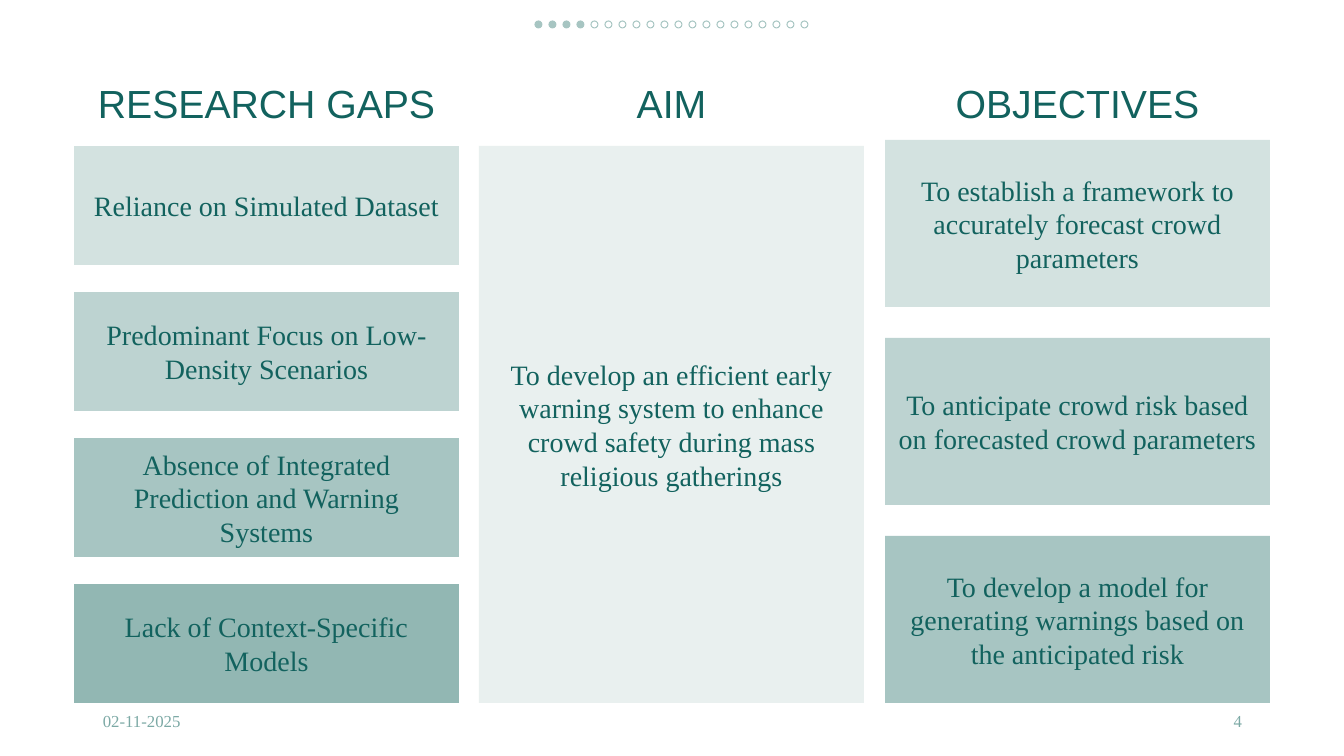
from dataclasses import dataclass
from pptx import Presentation
from pptx.dml.color import RGBColor
from pptx.enum.shapes import MSO_SHAPE
from pptx.enum.text import MSO_ANCHOR, PP_ALIGN
from pptx.util import Pt


@dataclass(frozen=True)
class Theme:
    ink: str = "12625E"
    muted: str = "7CA9A5"
    pale: str = "E9F0EF"
    tints: tuple = ("D3E2E0", "BDD3D1", "A7C5C2", "92B7B3")
    dot: str = "A7C5C2"
    blank: str = "FFFFFF"
    head: str = "Arial"
    body: str = "Times New Roman"
    large: int = 28
    normal: int = 20
    small: int = 12


theme = Theme()
SCALE = 914400 / 100.8


def px(*nums):
    return [round(n * SCALE) for n in nums]


def write(shape, text, font, size, color, align=PP_ALIGN.CENTER):
    frame = shape.text_frame
    frame.word_wrap = True
    frame.vertical_anchor = MSO_ANCHOR.MIDDLE
    para = frame.paragraphs[0]
    para.alignment = align
    run = para.add_run()
    run.text = text
    run.font.name = font
    run.font.size = Pt(size)
    run.font.color.rgb = RGBColor.from_string(color)


deck = Presentation()
deck.slide_width, deck.slide_height = px(1344, 756)
slide = deck.slides.add_slide(deck.slide_layouts[6])
shapes = slide.shapes

WIDTH = 385
columns = [
    ("RESEARCH GAPS", 74, 146, 119, 146, theme.tints, [
        "Reliance on Simulated Dataset",
        "Predominant Focus on Low-Density Scenarios",
        "Absence of Integrated Prediction and Warning Systems",
        "Lack of Context-Specific Models",
    ]),
    ("AIM", 479, 146, 557, 0, [theme.pale], [
        "To develop an efficient early warning system to enhance crowd safety "
        "during mass religious gatherings",
    ]),
    ("OBJECTIVES", 885, 140, 167, 198, theme.tints, [
        "To establish a framework to accurately forecast crowd parameters",
        "To anticipate crowd risk based on forecasted crowd parameters",
        "To develop a model for generating warnings based on the anticipated risk",
    ]),
]
for title, left, top, height, step, fills, items in columns:
    head = shapes.add_textbox(*px(left, 30, WIDTH, 146))
    write(head, title, theme.head, theme.large, theme.ink)
    for row, (item, fill) in enumerate(zip(items, fills)):
        card = shapes.add_shape(
            MSO_SHAPE.RECTANGLE, *px(left, top + row * step, WIDTH, height))
        card.shadow.inherit = False
        card.fill.solid()
        card.fill.fore_color.rgb = RGBColor.from_string(fill)
        card.line.fill.background()
        write(card, item, theme.body, theme.normal, theme.ink)

PAGE, TOTAL = 4, 20
track = shapes.add_group_shape()
for step in range(TOTAL):
    dot = track.shapes.add_shape(MSO_SHAPE.OVAL, *px(535 + step * 14, 21, 7, 7))
    dot.shadow.inherit = False
    dot.fill.solid()
    dot.fill.fore_color.rgb = RGBColor.from_string(
        theme.dot if step < PAGE else theme.blank)
    dot.line.color.rgb = RGBColor.from_string(theme.dot)
    dot.line.width = Pt(0.71)

for text, left, width, align in [
    ("02-11-2025", 93, 125, PP_ALIGN.LEFT),
    (str(PAGE), 1169, 83, PP_ALIGN.RIGHT),
]:
    foot = shapes.add_textbox(*px(left, 701, width, 40))
    write(foot, text, theme.body, theme.small, theme.muted, align)

deck.save("out.pptx")
